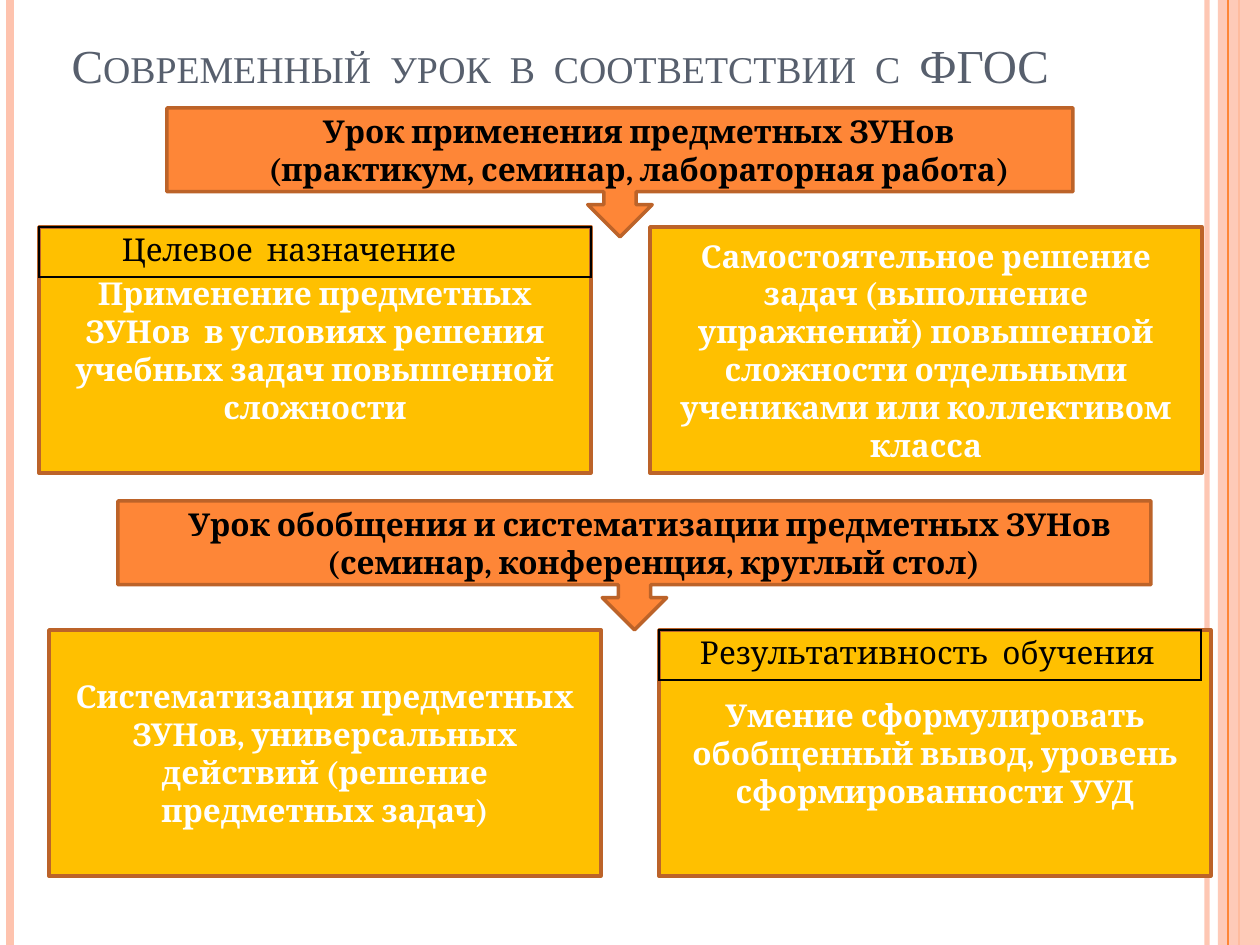
from typing import NamedTuple

from lxml import etree
from pptx import Presentation
from pptx.dml.color import RGBColor
from pptx.enum.shapes import MSO_CONNECTOR, MSO_SHAPE
from pptx.enum.text import MSO_ANCHOR, PP_ALIGN
from pptx.oxml.ns import qn
from pptx.util import Pt

PX = 7257  # EMU in one px, at 126 px to the inch
RECTANGLE = MSO_SHAPE.RECTANGLE
CALLOUT = MSO_SHAPE.DOWN_ARROW_CALLOUT
STRAIGHT = MSO_CONNECTOR.STRAIGHT
MIDDLE, BOTTOM = MSO_ANCHOR.MIDDLE, MSO_ANCHOR.BOTTOM
CENTER, LEFT = PP_ALIGN.CENTER, PP_ALIGN.LEFT

COLORS = {
    "orange": "FE8637",
    "peach": "FEC3AE",
    "amber": "FFC000",
    "brown": "BC6329",
    "slate": "575F6D",
    "black": "000000",
    "white": "FFFFFF",
}
PAGE_WIDTH, PAGE_HEIGHT = 1260, 945
BOX_WIDTH, BOX_HEIGHT = 552, 246
CALLOUT_HEIGHT = 129
LABEL_HEIGHT = 50


class Stripe(NamedTuple):
    x: int
    color: str
    weight: float
    opacity: int = 100


class Callout(NamedTuple):
    left: int
    top: int
    width: int
    lines: tuple[str, ...]


class Box(NamedTuple):
    left: int
    top: int
    text: str


class Label(NamedTuple):
    left: int
    top: int
    width: int
    indent: int
    text: str


STRIPES = [
    Stripe(1207, "peach", 3, 93),
    Stripe(10, "peach", 4.5),
    Stripe(1239, "orange", 1.5),
]
INNER_STRIPE = Stripe(1228, "orange", 0.75)
BOXES = [
    Box(39, 227, "Применение предметных ЗУНов  в условиях решения "
        "учебных задач повышенной сложности"),
    Box(650, 227, "Самостоятельное решение задач (выполнение упражнений) повышенной "
        "сложности отдельными учениками или коллективом класса"),
    Box(49, 630, "Систематизация предметных ЗУНов, универсальных действий "
        "(решение предметных задач)"),
    Box(659, 630, "Умение сформулировать обобщенный вывод, уровень сформированности УУД"),
]
CALLOUTS = [
    Callout(167, 108, 906, ("Урок применения предметных ЗУНов",
                            "(практикум, семинар, лабораторная работа)")),
    Callout(118, 501, 1033, ("Урок обобщения и систематизации предметных ЗУНов ",
                             "(семинар, конференция, круглый стол)")),
]
LABELS = [
    Label(39, 227, 552, 83, "Целевое  назначение"),
    Label(659, 630, 542, 41, "Результативность  обучения"),
]


def px(*lengths: int) -> list[int]:
    return [length * PX for length in lengths]


def rgb(name: str) -> RGBColor:
    return RGBColor.from_string(COLORS[name])


def set_opacity(holder, percent: int) -> None:
    color = next(holder.iter(qn("a:srgbClr")))
    etree.SubElement(color, qn("a:alpha")).set("val", str(percent * 1000))


def add_span(para, text: str, color: str, size: int = 18,
             font: str = "Cambria", bold: bool = False):
    span = para.add_run()
    span.text = text
    span.font.name = font
    span.font.size = Pt(size)
    span.font.bold = bold
    span.font.color.rgb = rgb(color)
    return span


def add_stripe(page, stripe: Stripe) -> None:
    line = page.shapes.add_connector(STRAIGHT, *px(stripe.x, 0, stripe.x, PAGE_HEIGHT))
    line.line.color.rgb = rgb(stripe.color)
    line.line.width = Pt(stripe.weight)
    properties = line._element.spPr
    etree.SubElement(properties, qn("a:effectLst"))
    if stripe.opacity < 100:
        set_opacity(properties, stripe.opacity)


def add_panel(page) -> None:
    """Draw the translucent band along the right edge."""
    panel = page.shapes.add_shape(RECTANGLE, *px(1218, 0, PAGE_WIDTH - 1218, PAGE_HEIGHT))
    panel.shadow.inherit = False
    panel.fill.solid()
    panel.fill.fore_color.rgb = rgb("peach")
    panel.line.fill.background()
    set_opacity(panel._element.spPr, 87)


def add_filled_shape(page, kind, bounds: list[int], fill: str):
    """Add a brown-edged shape and return it with its centred paragraph."""
    shape = page.shapes.add_shape(kind, *bounds)
    shape.shadow.inherit = False
    shape.fill.solid()
    shape.fill.fore_color.rgb = rgb(fill)
    shape.line.color.rgb = rgb("brown")
    shape.line.width = Pt(2)
    shape.text_frame.word_wrap = True
    shape.text_frame.vertical_anchor = MIDDLE
    para = shape.text_frame.paragraphs[0]
    para.alignment = CENTER
    return para


def add_box(page, box: Box) -> None:
    bounds = px(box.left, box.top, BOX_WIDTH, BOX_HEIGHT)
    para = add_filled_shape(page, RECTANGLE, bounds, "amber")
    add_span(para, box.text, "white", bold=True)


def add_callout(page, callout: Callout) -> None:
    bounds = px(callout.left, callout.top, callout.width, CALLOUT_HEIGHT)
    para = add_filled_shape(page, CALLOUT, bounds, "orange")
    para.space_before = Pt(6)
    para._p.get_or_add_pPr().set("marL", str(38 * PX))
    for number, text in enumerate(callout.lines):
        if number:
            para.add_line_break()
        add_span(para, text, "black", bold=True)


def add_label(page, label: Label) -> None:
    """Add a one-cell table with a black border and no fill."""
    bounds = px(label.left, label.top, label.width, LABEL_HEIGHT)
    table = page.shapes.add_table(1, 1, *bounds).table
    table.first_row = False
    table.horz_banding = False
    cell = table.cell(0, 0)
    cell.margin_left = label.indent * PX
    properties = cell._tc.get_or_add_tcPr()
    for side in ("a:lnL", "a:lnR", "a:lnT", "a:lnB"):
        border = etree.SubElement(properties, qn(side), w=str(Pt(1)))
        fill = etree.SubElement(border, qn("a:solidFill"))
        etree.SubElement(fill, qn("a:srgbClr"), val=COLORS["black"])
    cell.fill.background()
    add_span(cell.text_frame.paragraphs[0], label.text, "black")


def set_title(page, text: str) -> None:
    title = page.shapes.title
    title.left, title.top, title.width, title.height = px(59, 29, 1123, 70)
    title.text_frame.word_wrap = True
    title.text_frame.vertical_anchor = BOTTOM
    para = title.text_frame.paragraphs[0]
    para.alignment = LEFT
    span = add_span(para, text, "slate", 27, "Times New Roman")
    span.font._element.set("cap", "small")


def main() -> None:
    deck = Presentation()
    deck.slide_width, deck.slide_height = px(PAGE_WIDTH, PAGE_HEIGHT)
    page = deck.slides.add_slide(deck.slide_layouts[5])
    set_title(page, "Современный  урок  в  соответствии  с  ФГОС")
    for stripe in STRIPES:
        add_stripe(page, stripe)
    add_panel(page)
    add_stripe(page, INNER_STRIPE)
    for box in BOXES:
        add_box(page, box)
    for callout in CALLOUTS:
        add_callout(page, callout)
    for label in LABELS:
        add_label(page, label)
    deck.save("out.pptx")


if __name__ == "__main__":
    main()
